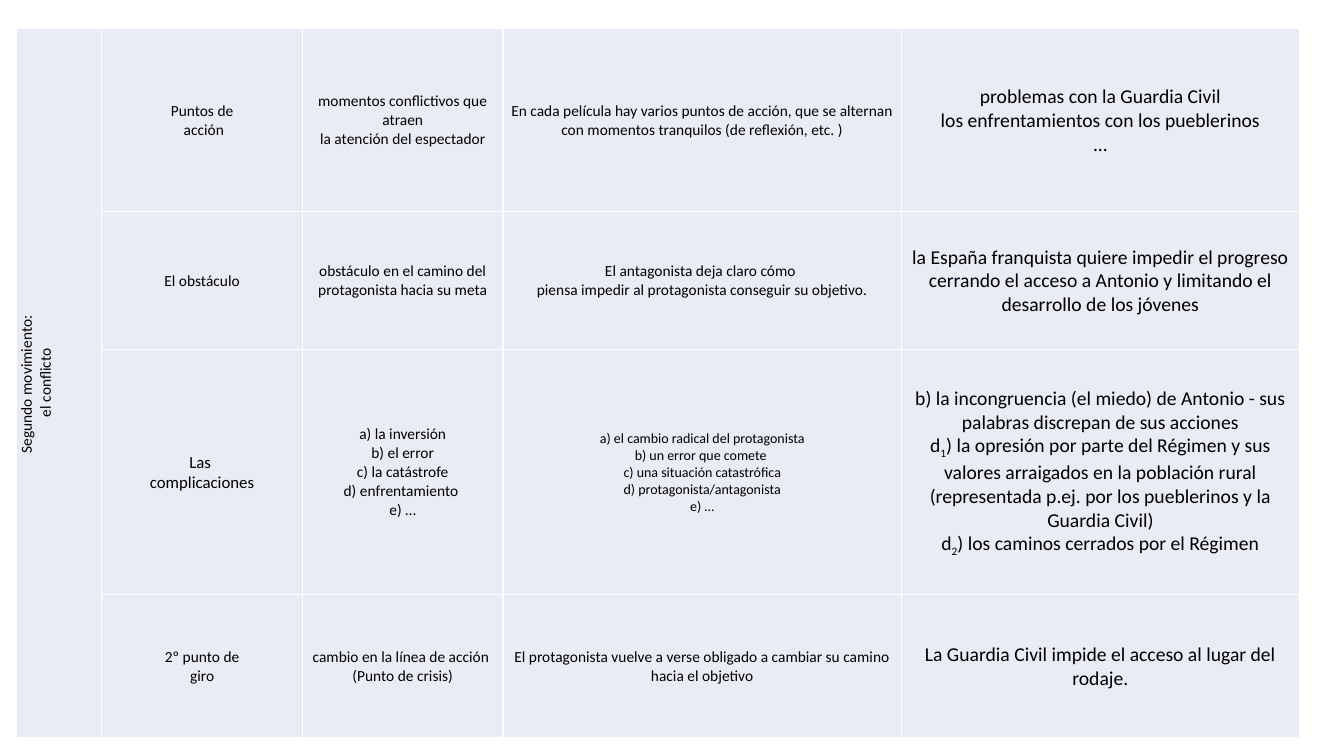
import copy
import dataclasses

import lxml.etree
import pptx
import pptx.dml.color
import pptx.enum.text
import pptx.oxml.ns
import pptx.util

Inches = pptx.util.Inches


@dataclasses.dataclass(frozen=True)
class Theme:
    font: str = "Calibri"
    ink: str = "000000"
    cell: str = "E9EBF5"
    border: str = "FFFFFF"
    border_pt: float = 1
    small: int = 10
    body: int = 11
    label: int = 12
    example: int = 14


THEME = Theme()
COLUMN_WIDTHS = [0.85, 1.99, 1.99, 3.95, 3.95]
ROW_HEIGHTS = [1.82, 1.37, 2.43, 1.37]
COLUMN_SIZES = [THEME.body] * 4 + [THEME.example]
SPECIAL_SIZES = {(2, 1): THEME.label, (2, 3): THEME.small}

MOVEMENT = "Segundo movimiento: \nel conflicto"
# Text between tildes is subscript.
STAGES = [
    ["Puntos de\n acción",
     "momentos conflictivos que atraen\nla atención del espectador",
     "En cada película hay varios puntos de acción, que se alternan con momentos "
     "tranquilos (de reflexión, etc. )",
     "problemas con la Guardia Civil\nlos enfrentamientos con los pueblerinos\n..."],
    ["El obstáculo",
     "obstáculo en el camino del protagonista hacia su meta",
     "El antagonista deja claro cómo \npiensa impedir al protagonista conseguir su objetivo.",
     "la España franquista quiere impedir el progreso cerrando el acceso a Antonio y "
     "limitando el desarrollo de los jóvenes"],
    ["Las \ncomplicaciones",
     "a) la inversión\nb) el error\nc) la catástrofe\nd) enfrentamiento \ne) …",
     "a) el cambio radical del protagonista\nb) un error que comete \n"
     "c) una situación catastrófica\nd) protagonista/antagonista\ne) …",
     "b) la incongruencia (el miedo) de Antonio - sus palabras discrepan de sus acciones\n"
     "d~1~) la opresión por parte del Régimen y sus valores arraigados en la población rural "
     "(representada p.ej. por los pueblerinos y la Guardia Civil)\n"
     "d~2~) los caminos cerrados por el Régimen"],
    ["2º punto de\ngiro",
     "cambio en la línea de acción \n(Punto de crisis)",
     "El protagonista vuelve a verse obligado a cambiar su camino hacia el objetivo",
     "La Guardia Civil impide el acceso al lugar del rodaje."],
]


class SlideBuilder:
    def __init__(self, slide, theme):
        self.slide = slide
        self.theme = theme

    def table(self, left, top, widths, heights):
        table = self.slide.shapes.add_table(
            len(heights), len(widths), Inches(left), Inches(top),
            Inches(sum(widths)), Inches(sum(heights))).table
        for column, width in zip(table.columns, widths):
            column.width = Inches(width)
        for row, height in zip(table.rows, heights):
            row.height = Inches(height)
        for cell in table.iter_cells():
            self.cell_style(cell)
        return table

    def cell_style(self, cell):
        layout = {
            "margin_left": Inches(0.01),
            "margin_right": Inches(0.01),
            "margin_top": Inches(0.01),
            "margin_bottom": 0,
            "vertical_anchor": pptx.enum.text.MSO_ANCHOR.MIDDLE,
        }
        for name, value in layout.items():
            setattr(cell, name, value)
        qn = pptx.oxml.ns.qn
        properties = cell._tc.get_or_add_tcPr()
        for side in ("a:lnL", "a:lnR", "a:lnT", "a:lnB"):
            line = lxml.etree.SubElement(
                properties, qn(side), w=str(pptx.util.Pt(self.theme.border_pt)))
            fill = lxml.etree.SubElement(line, qn("a:solidFill"))
            lxml.etree.SubElement(fill, qn("a:srgbClr"), val=self.theme.border)
        cell.fill.solid()
        cell.fill.fore_color.rgb = pptx.dml.color.RGBColor.from_string(self.theme.cell)

    def cell_text(self, cell, text, size):
        paragraph = cell.text_frame.paragraphs[0]
        paragraph.alignment = pptx.enum.text.PP_ALIGN.CENTER
        for index, piece in enumerate(text.split("~")):
            for number, line in enumerate(piece.split("\n")):
                if number:
                    self.line_break(paragraph)
                self.run(paragraph, line, size, subscript=index % 2 == 1)

    def run(self, paragraph, text, size, subscript):
        run = paragraph.add_run()
        run.text = text
        font = {"name": self.theme.font, "size": pptx.util.Pt(size)}
        for name, value in font.items():
            setattr(run.font, name, value)
        run.font.color.rgb = pptx.dml.color.RGBColor.from_string(self.theme.ink)
        if subscript:
            run._r.get_or_add_rPr().set("baseline", "-25000")

    def line_break(self, paragraph):
        """Break the line, keeping the format of the run before it."""
        run_format = copy.deepcopy(paragraph.runs[-1]._r.get_or_add_rPr())
        paragraph.add_line_break()
        paragraph._p[-1].append(run_format)


def main():
    presentation = pptx.Presentation()
    presentation.slide_width = Inches(13.33)
    presentation.slide_height = Inches(7.5)
    slide = presentation.slides.add_slide(presentation.slide_layouts[6])
    builder = SlideBuilder(slide, THEME)

    plot = builder.table(0.16, 0.28, COLUMN_WIDTHS, ROW_HEIGHTS)
    movement = plot.cell(0, 0)
    movement.merge(plot.cell(len(STAGES) - 1, 0))
    movement._tc.get_or_add_tcPr().set("vert", "vert270")
    builder.cell_text(movement, MOVEMENT, THEME.body)

    for row, stage in enumerate(STAGES):
        for column, text in enumerate(stage, start=1):
            size = SPECIAL_SIZES.get((row, column), COLUMN_SIZES[column])
            builder.cell_text(plot.cell(row, column), text, size)

    presentation.save("out.pptx")


if __name__ == "__main__":
    main()
